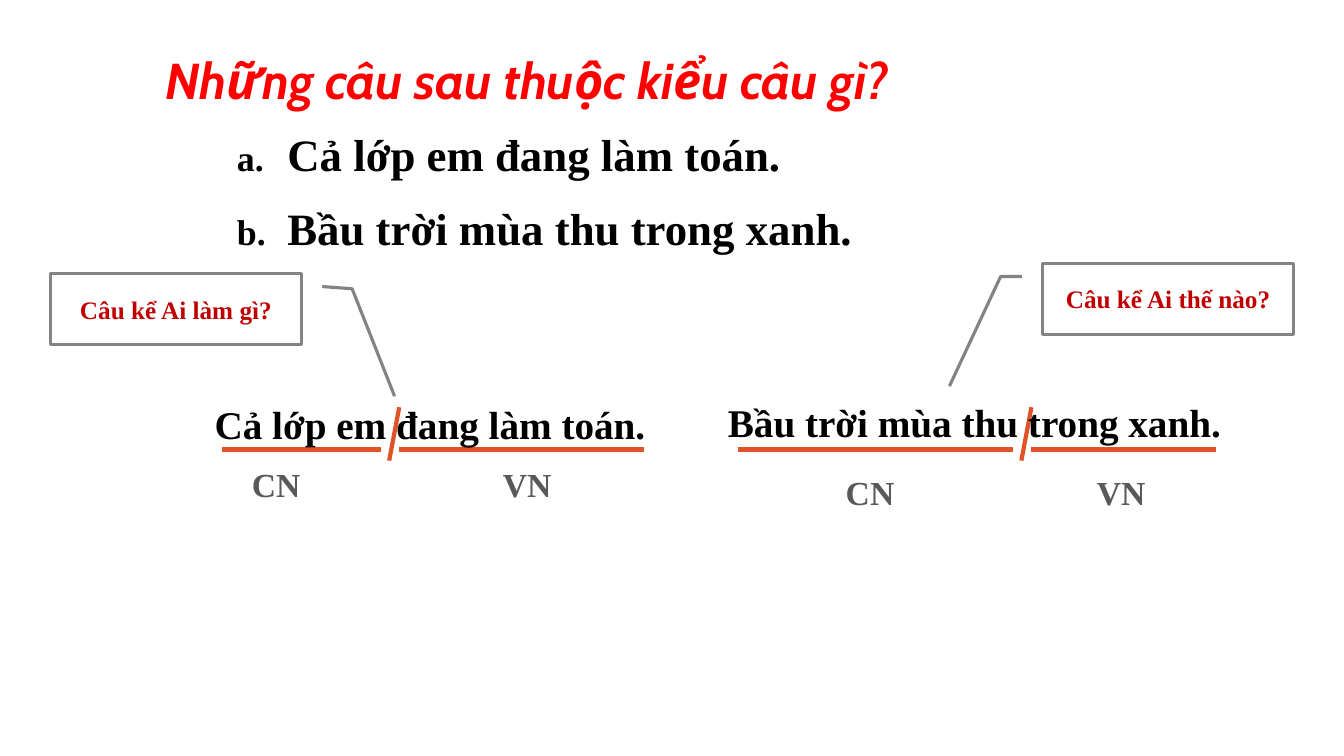
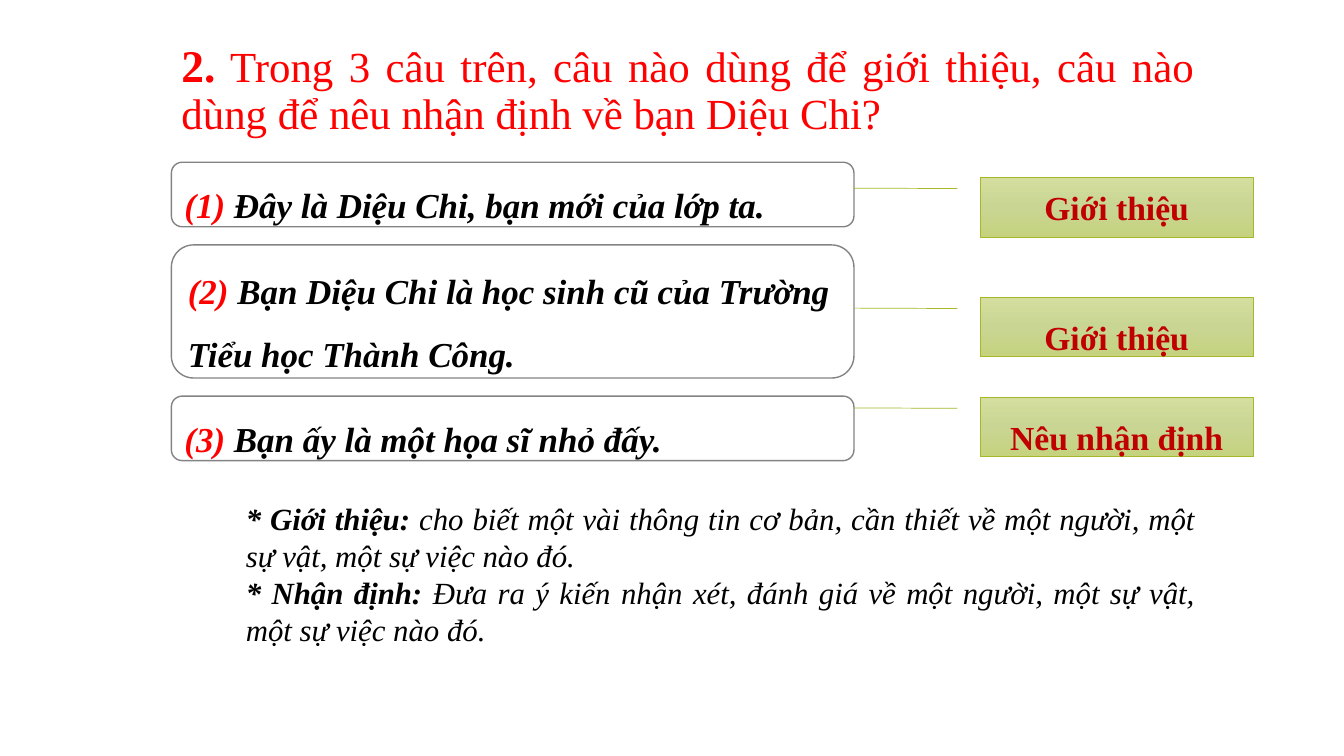
from copy import deepcopy

from lxml import etree
from pptx import Presentation
from pptx.dml.color import RGBColor
from pptx.enum import shapes, text
from pptx.oxml import ns
from pptx.util import Inches, Pt

COLORS = {
    "white": "FFFFFF", "black": "000000", "red": "FF0000", "crimson": "C00000",
    "gray": "838383", "label": "595959", "orange": "DF5327", "green": "A6B727",
    "green_top": "D4DF9F", "green_middle": "C9D593", "green_bottom": "C5D37E",
}
SERIF = "Times New Roman"
TITLE_FONT = "Cabin"
LEFT, CENTER, JUSTIFY = (text.PP_ALIGN.LEFT, text.PP_ALIGN.CENTER,
                         text.PP_ALIGN.JUSTIFY)
SHAPE = shapes.MSO_SHAPE


def color(name):
    return RGBColor.from_string(COLORS[name])


def style(para, size, tint, bold=True, italic=False, name=SERIF):
    font = para.font
    font.name, font.size = name, Pt(size)
    font.bold, font.italic = bold, italic
    font.color.rgb = color(tint)


def add_span(para, words, **changes):
    """Add a run; changes may hold tint, size or bold."""
    span = para.add_run()
    span.text = words
    if "tint" in changes:
        span.font.color.rgb = color(changes["tint"])
    if "size" in changes:
        span.font.size = Pt(changes["size"])
    if "bold" in changes:
        span.font.bold = changes["bold"]


def place(box, left, top, width, height):
    box.left, box.top = Inches(left), Inches(top)
    box.width, box.height = Inches(width), Inches(height)


def place_title(page, left, top, width, height, align):
    title = page.shapes.title
    place(title, left, top, width, height)
    frame = title.text_frame
    frame.auto_size = text.MSO_AUTO_SIZE.NONE
    frame.vertical_anchor = text.MSO_ANCHOR.BOTTOM
    para = frame.paragraphs[0]
    para.alignment, para.line_spacing = align, 0.9
    return para


def add_text_box(page, left, top, width, height):
    box = page.shapes.add_textbox(Inches(left), Inches(top),
                                  Inches(width), Inches(height))
    box.text_frame.word_wrap = True
    return box.text_frame


def add_panel(page, kind, left, top, width, height, edge, weight):
    box = page.shapes.add_shape(kind, Inches(left), Inches(top),
                                Inches(width), Inches(height))
    box.shadow.inherit = False
    box.fill.solid()
    box.fill.fore_color.rgb = color("white")
    box.line.color.rgb = color(edge)
    box.line.width = Pt(weight)
    box.text_frame.vertical_anchor = text.MSO_ANCHOR.MIDDLE
    return box


def set_adjustments(box, values):
    for index, value in enumerate(values):
        box.adjustments[index] = value


def add_line(page, start, end):
    line = page.shapes.add_connector(shapes.MSO_CONNECTOR.STRAIGHT,
                                     *map(Inches, start + end))
    line.line.color.rgb = color("orange")
    line.line.width = Pt(3)
    etree.SubElement(line._element.spPr, ns.qn("a:effectLst"))


def fill_lettered_list(page, items, left, top, width, height):
    body = page.placeholders[1]
    place(body, left, top, width, height)
    frame = body.text_frame
    frame.auto_size = text.MSO_AUTO_SIZE.NONE
    for index, item in enumerate(items):
        para = frame.add_paragraph() if index else frame.paragraphs[0]
        para.line_spacing = 0.9
        para.space_before = Pt(18 if index else 0)
        props = para._p.get_or_add_pPr()
        props.set("marL", str(Inches(0.55)))
        props.set("indent", str(Inches(-0.5)))
        etree.SubElement(props, ns.qn("a:buSzPct"), val="80000")
        etree.SubElement(props, ns.qn("a:buAutoNum"), type="alphaLcPeriod")
        style(para, 32, "black")
        add_span(para, item)


def add_parsed_sentence(page, sentence, left, split, right, text_box, labels):
    """Underline subject and predicate, with a slash between them."""
    base = 4.46
    add_line(page, (left, base), (split - 0.18, base))
    add_line(page, (split, base), (right, base))
    add_line(page, (split, base - 0.42), (split - 0.1, base + 0.11))
    para = add_text_box(page, *text_box).paragraphs[0]
    style(para, 28, "black")
    add_span(para, sentence)

    para = add_text_box(page, *labels, 3.4, 0.5).paragraphs[0]
    tabs = etree.SubElement(para._p.get_or_add_pPr(), ns.qn("a:tabLst"))
    etree.SubElement(tabs, ns.qn("a:tab"), pos=str(Inches(2.49)), algn="l")
    style(para, 24, "label")
    add_span(para, "CN\tVN")


def add_sentence_type(page, words, left, top, bend, flipped=False):
    box = add_panel(page, SHAPE.LINE_CALLOUT_2, left, top, 2.49, 0.71,
                    "gray", 2.25)
    set_adjustments(box, (0.188, -0.083, *bend, 1.72, -0.371))
    if flipped:
        box._element.spPr.xfrm.set("flipH", "1")
    para = box.text_frame.paragraphs[0]
    para.alignment = CENTER
    style(para, 18, "crimson")
    add_span(para, words)


def add_numbered_sentence(page, number, sentence, top, height):
    box = add_panel(page, SHAPE.FLOWCHART_ALTERNATE_PROCESS,
                    1.7, top, 6.77, height, "gray", 1)
    para = box.text_frame.paragraphs[0]
    para.alignment, para.line_spacing = LEFT, 1.5
    style(para, 25, "black", italic=True)
    add_span(para, f"({number}) ", tint="red")
    add_span(para, sentence)


def add_answer(page, words, top, spacing):
    box = add_panel(page, SHAPE.LINE_CALLOUT_1, 9.72, top, 2.71, 0.59,
                    "green", 0.5)
    set_adjustments(box, (0.188, -0.083, 0.181, -0.464))
    box.fill.gradient()
    box.fill.gradient_angle = 270
    stops = box._element.spPr.find(".//" + ns.qn("a:gsLst"))
    stops.insert(1, deepcopy(stops[0]))
    shades = ("green_top", "green_middle", "green_bottom")
    for index, (stop, shade) in enumerate(zip(box.fill.gradient_stops, shades)):
        stop.position = index / 2
        stop.color.rgb = color(shade)
    para = box.text_frame.paragraphs[0]
    para.alignment, para.line_spacing = CENTER, spacing
    style(para, 24, "crimson")
    add_span(para, words)


def add_definitions(page, definitions, left, top, width, height):
    frame = add_text_box(page, left, top, width, height)
    for index, (term, meaning) in enumerate(definitions):
        para = frame.add_paragraph() if index else frame.paragraphs[0]
        para.alignment = JUSTIFY
        style(para, 22, "black", bold=False, italic=True)
        add_span(para, f"* {term}: ", bold=True)
        add_span(para, meaning)


def build_sentence_types(deck):
    page = deck.slides.add_slide(deck.slide_layouts[1])
    para = place_title(page, 1.54, 0.19, 10.25, 0.96, LEFT)
    style(para, 36, "red", italic=True, name=TITLE_FONT)
    add_span(para, "Những câu sau thuộc kiểu câu gì?")
    action, trait = "Cả lớp em đang làm toán.", "Bầu trời mùa thu trong xanh."
    fill_lettered_list(page, (action, trait), 2.2, 1.27, 10.25, 1.33)
    add_parsed_sentence(page, action, 2.2, 3.96, 6.39,
                        (2.03, 3.92, 4.92, 0.57), (2.4, 4.55))
    add_parsed_sentence(page, trait, 7.32, 10.23, 12.06,
                        (7.12, 3.9, 6.01, 0.57), (8.29, 4.63))
    add_sentence_type(page, "Câu kể Ai thế nào?", 10.34, 2.61, (0.188, -0.167))
    add_sentence_type(page, "Câu kể Ai làm gì?", 0.5, 2.71, (0.218, -0.202),
                      flipped=True)


def build_sentence_uses(deck):
    page = deck.slides.add_slide(deck.slide_layouts[5])
    para = place_title(page, 1.7, 0.36, 10.25, 1.07, JUSTIFY)
    style(para, 30.6, "red", bold=False)
    add_span(para, "2.", size=32.4, bold=True)
    add_span(para, " Trong 3 câu trên, câu nào dùng để giới thiệu, "
                   "câu nào dùng để nêu nhận định về bạn Diệu Chi?")
    sentences = (
        ("Đây là Diệu Chi, bạn mới của lớp ta.", 0.64),
        ("Bạn Diệu Chi là học sinh cũ của Trường Tiểu học Thành Công.", 1.32),
        ("Bạn ấy là một họa sĩ nhỏ đấy.", 0.64),
    )
    top = 1.61
    for number, (sentence, height) in enumerate(sentences, 1):
        add_numbered_sentence(page, number, sentence, top, height)
        top += height + 0.18
    for words, top, spacing in (("Giới thiệu", 1.76, 1),
                                ("Giới thiệu", 2.95, 1.5),
                                ("Nêu nhận định", 3.94, 1.5)):
        add_answer(page, words, top, spacing)
    add_definitions(page, (
        ("Giới thiệu", "cho biết một vài thông tin cơ bản, cần thiết về "
                       "một người, một sự vật, một sự việc nào đó."),
        ("Nhận định", "Đưa ra ý kiến nhận xét, đánh giá về một người, "
                      "một sự vật, một sự việc nào đó."),
    ), 2.34, 4.91, 9.61, 1.58)


def main():
    deck = Presentation()
    deck.slide_width, deck.slide_height = Inches(13.33), Inches(7.5)
    build_sentence_types(deck)
    build_sentence_uses(deck)
    deck.save("out.pptx")


if __name__ == "__main__":
    main()
